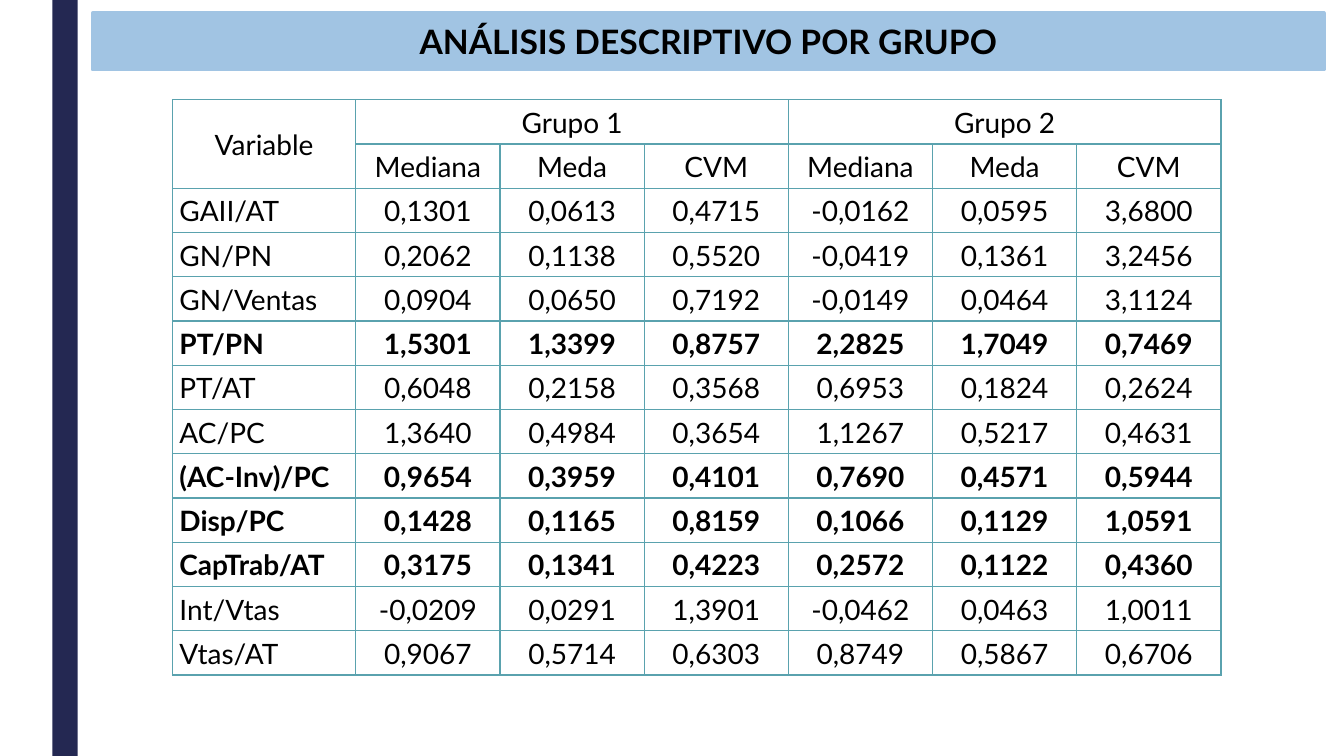
"""Build the slide with the descriptive analysis by group."""
import pptx
import pptx.dml.color
import pptx.enum.shapes
import pptx.enum.text
import pptx.oxml
import pptx.oxml.ns
import pptx.util

Inches = pptx.util.Inches
Pt = pptx.util.Pt
RGBColor = pptx.dml.color.RGBColor
ALIGN = pptx.enum.text.PP_ALIGN
MIDDLE = pptx.enum.text.MSO_ANCHOR.MIDDLE

NAVY = RGBColor(0x24, 0x28, 0x52)
SKY = RGBColor(0xA1, 0xC4, 0xE3)
TEAL = RGBColor(0x5A, 0xA2, 0xAE)
BLACK = RGBColor(0, 0, 0)
WHITE = RGBColor(255, 255, 255)
FONT = "Lato"

STATS = ["Mediana", "Meda", "CVM"]
GROUPS = ["Grupo 1", "Grupo 2"]
ROWS = [
    "GAII/AT 0,1301 0,0613 0,4715 -0,0162 0,0595 3,6800",
    "GN/PN 0,2062 0,1138 0,5520 -0,0419 0,1361 3,2456",
    "GN/Ventas 0,0904 0,0650 0,7192 -0,0149 0,0464 3,1124",
    "PT/PN 1,5301 1,3399 0,8757 2,2825 1,7049 0,7469",
    "PT/AT 0,6048 0,2158 0,3568 0,6953 0,1824 0,2624",
    "AC/PC 1,3640 0,4984 0,3654 1,1267 0,5217 0,4631",
    "(AC-Inv)/PC 0,9654 0,3959 0,4101 0,7690 0,4571 0,5944",
    "Disp/PC 0,1428 0,1165 0,8159 0,1066 0,1129 1,0591",
    "CapTrab/AT 0,3175 0,1341 0,4223 0,2572 0,1122 0,4360",
    "Int/Vtas -0,0209 0,0291 1,3901 -0,0462 0,0463 1,0011",
    "Vtas/AT 0,9067 0,5714 0,6303 0,8749 0,5867 0,6706",
]
BOLD = {"PT/PN", "(AC-Inv)/PC", "Disp/PC", "CapTrab/AT"}


def write(frame, text, size, bold=False, align=ALIGN.CENTER):
    """Write one aligned run of text into a frame."""
    para = frame.paragraphs[0]
    para.alignment = align
    run = para.add_run()
    run.text = text
    font = run.font
    font.name, font.size, font.bold = FONT, Pt(size), bold
    font.color.rgb = BLACK


def add_bar(slide):
    """Add the dark bar down the left side."""
    bar = slide.shapes.add_shape(
        pptx.enum.shapes.MSO_SHAPE.RECTANGLE,
        Inches(0.52), Inches(0), Inches(0.25), Inches(7.5))
    bar.shadow.inherit = False
    bar.fill.solid()
    bar.fill.fore_color.rgb = NAVY
    bar.line.fill.background()


def set_title(slide, text):
    """Place and fill the title band."""
    title = slide.shapes.title
    title.left, title.top = Inches(0.92), Inches(0.13)
    title.width, title.height = Inches(12.21), Inches(0.56)
    title.fill.solid()
    title.fill.fore_color.rgb = SKY
    title.line.color.rgb = SKY
    title.line.width = Pt(2.75)
    frame = title.text_frame
    frame.word_wrap = False
    frame.auto_size = pptx.enum.text.MSO_AUTO_SIZE.NONE
    frame.vertical_anchor = MIDDLE
    write(frame, text, 24, True)


def style_cell(cell):
    """Give a cell its borders, fill, margins and anchor."""
    props = cell._tc.get_or_add_tcPr()
    space = pptx.oxml.ns.nsdecls("a")
    for side in ("lnL", "lnR", "lnT", "lnB"):
        props.append(pptx.oxml.parse_xml(
            f'<a:{side} {space} w="{Pt(1)}"><a:solidFill>'
            f'<a:srgbClr val="{TEAL}"/></a:solidFill></a:{side}>'))
    cell.fill.solid()
    cell.fill.fore_color.rgb = WHITE
    cell.margin_left = cell.margin_right = cell.margin_top = Inches(0.01)
    cell.margin_bottom = Inches(0)
    cell.vertical_anchor = MIDDLE


def fill_head(table):
    """Write the two header rows and merge their cells."""
    table.cell(0, 0).merge(table.cell(1, 0))
    write(table.cell(0, 0).text_frame, "Variable", 20)
    for num, group in enumerate(GROUPS):
        first = 1 + num * len(STATS)
        head = table.cell(0, first)
        head.merge(table.cell(0, first + len(STATS) - 1))
        write(head.text_frame, group, 20)
        for col, stat in enumerate(STATS, first):
            write(table.cell(1, col).text_frame, stat, 20)


def fill_body(table):
    """Write the variables and their values."""
    for row, line in enumerate(ROWS, 2):
        label, *values = line.split()
        bold = label in BOLD
        cell = table.cell(row, 0)
        cell.margin_left = Inches(0.07)
        write(cell.text_frame, label, 20, bold, ALIGN.LEFT)
        for col, value in enumerate(values, 1):
            write(table.cell(row, col).text_frame, value, 20, bold)


def add_stats(slide):
    """Add the table of statistics."""
    count = len(ROWS) + 2
    width, height = Inches(10.39), Inches(5.71)
    table = slide.shapes.add_table(
        count, 7, Inches(1.71), Inches(0.99), width, height).table
    table.horz_banding = table.first_row = False
    for row in table.rows:
        row.height = height // count
    for num, col in enumerate(table.columns):
        col.width = Inches(1.43 if num else 1.82)
    for cell in table.iter_cells():
        style_cell(cell)
    fill_head(table)
    fill_body(table)


def main():
    """Build and save the deck."""
    deck = pptx.Presentation()
    deck.slide_width, deck.slide_height = Inches(13.33), Inches(7.5)
    slide = deck.slides.add_slide(deck.slide_layouts[5])
    add_bar(slide)
    add_stats(slide)
    set_title(slide, "ANÁLISIS DESCRIPTIVO POR GRUPO")
    deck.save("out.pptx")


if __name__ == "__main__":
    main()
